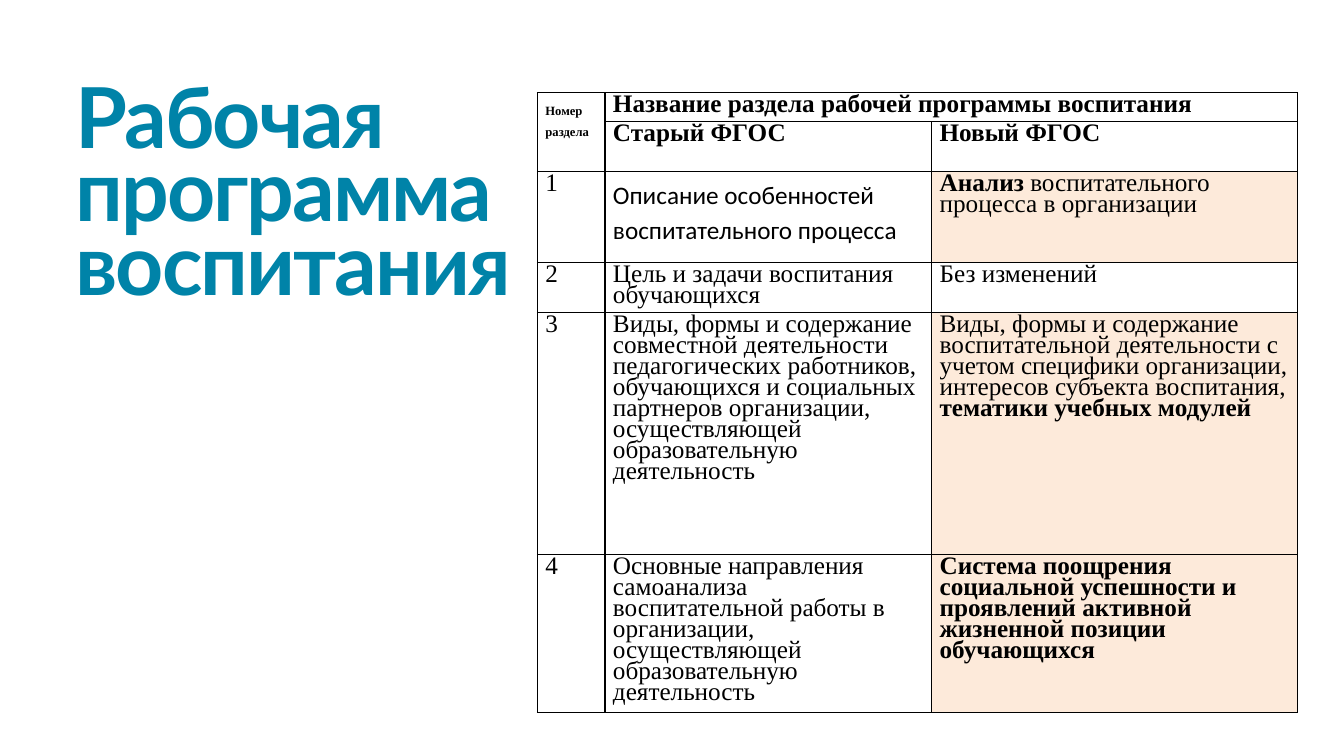
from dataclasses import dataclass

from lxml.etree import SubElement
from pptx import Presentation
from pptx.dml.color import RGBColor as Rgb
from pptx.enum.text import MSO_ANCHOR as Anchor, PP_ALIGN as Align
from pptx.oxml.ns import qn
from pptx.util import Inches, Pt


@dataclass(frozen=True)
class Theme:
    title_font: str = "Lato"
    table_font: str = "Times New Roman"
    plain_font: str = "Calibri"
    title_size: float = 60
    body_size: float = 18
    small_size: float = 9
    title_color: str = "0083A8"
    ink: str = "000000"
    paper: str = "FFFFFF"
    accent: str = "FDEADA"


class SlideBuilder:
    def __init__(self, slide, theme):
        self.slide = slide
        self.theme = theme

    def style(self, span, font, size, color, bold):
        span.font.name = font
        span.font.size = Pt(size)
        span.font.color.rgb = Rgb.from_string(color)
        span.font.bold = bold

    def title(self, text, left, top, width, height):
        box = self.slide.shapes.add_textbox(*map(Inches, (left, top, width, height)))
        frame = box.text_frame
        frame.word_wrap = True
        frame.margin_left = frame.margin_right = frame.margin_bottom = 0
        frame.margin_top = Inches(0.16)
        frame.text = text
        para = frame.paragraphs[0]
        para.alignment = Align.LEFT
        para.line_spacing = Pt(52.5)
        para.space_before = Pt(11.5)
        span = para.runs[0]
        self.style(span, self.theme.title_font, self.theme.title_size,
                   self.theme.title_color, True)
        span.font._element.set("spc", "-140")  # tightened letters

    def borders(self, cell):
        properties = cell._tc.get_or_add_tcPr()
        for side in ("a:lnL", "a:lnR", "a:lnT", "a:lnB"):
            line = SubElement(properties, qn(side), w=str(Pt(1)))
            fill = SubElement(line, qn("a:solidFill"))
            SubElement(fill, qn("a:srgbClr"), val=self.theme.ink)

    def cell(self, cell, spans, fill, font, size, spacing, after):
        cell.margin_left = cell.margin_right = Inches(0.08)
        cell.margin_top = cell.margin_bottom = Inches(0.04)
        cell.vertical_anchor = Anchor.TOP
        self.borders(cell)
        cell.fill.solid()
        cell.fill.fore_color.rgb = Rgb.from_string(fill)
        para = cell.text_frame.paragraphs[0]
        para.line_spacing = spacing
        para.space_after = Pt(after)
        for text, bold in spans:
            span = para.add_run()
            span.text = text
            self.style(span, font, size, self.theme.ink, bold)

    def table(self, rows, left, top, widths, heights, merges, accents, small, plain):
        theme = self.theme
        frame = self.slide.shapes.add_table(
            len(rows), len(widths), Inches(left), Inches(top),
            Inches(sum(widths)), Inches(sum(heights)))
        table = frame.table
        table.first_row = table.horz_banding = False
        for column, width in zip(table.columns, widths):
            column.width = Inches(width)
        for row, height in zip(table.rows, heights):
            row.height = Inches(height)
        for first, last in merges:
            table.cell(*first).merge(table.cell(*last))
        for r, row in enumerate(rows):
            for c, spans in enumerate(row):
                place = (r, c)
                self.cell(
                    table.cell(r, c), spans,
                    fill=theme.accent if place in accents else theme.paper,
                    font=theme.plain_font if place == plain else theme.table_font,
                    size=theme.small_size if place == small else theme.body_size,
                    spacing=1.15 if place == plain else Pt(15),
                    after=0 if place == plain else 3)


def bold(text):
    return [(text, True)]


def regular(text):
    return [(text, False)]


# Table content: each cell is a list of (text, bold) spans
SECTIONS = [
    [bold("Номер раздела"), bold("Название раздела рабочей программы воспитания"), []],
    [[], bold("Старый ФГОС"), bold("Новый ФГОС")],
    [regular("1"),
     regular("Описание особенностей воспитательного процесса"),
     bold("Анализ") + regular(" воспитательного процесса в организации")],
    [regular("2"),
     regular("Цель и задачи воспитания обучающихся"),
     regular("Без изменений")],
    [regular("3"),
     regular("Виды, формы и содержание совместной деятельности педагогических "
             "работников, обучающихся и социальных партнеров организации, "
             "осуществляющей образовательную деятельность"),
     regular("Виды, формы и содержание воспитательной деятельности с учетом "
             "специфики организации, интересов субъекта воспитания, ")
     + bold("тематики учебных модулей")],
    [regular("4"),
     regular("Основные направления самоанализа воспитательной работы в "
             "организации, осуществляющей образовательную деятельность"),
     bold("Система поощрения социальной успешности и проявлений активной "
          "жизненной позиции обучающихся")],
]


def main():
    deck = Presentation()
    deck.slide_width, deck.slide_height = Inches(13.33), Inches(7.5)
    page = SlideBuilder(deck.slides.add_slide(deck.slide_layouts[6]), Theme())

    # Heading on the left
    page.title("Рабочая программа воспитания", 0.75, 0.75, 4.92, 2.39)

    # Comparison of the old and new standards
    page.table(
        SECTIONS, left=5.33, top=0.92,
        widths=(0.67, 3.24, 3.63),
        heights=(0.24, 0.41, 0.9, 0.41, 2.4, 1.57),
        merges=[((0, 0), (1, 0)), ((0, 1), (0, 2))],
        accents={(2, 2), (4, 2), (5, 2)},
        small=(0, 0), plain=(2, 1))

    deck.save("out.pptx")


if __name__ == "__main__":
    main()
